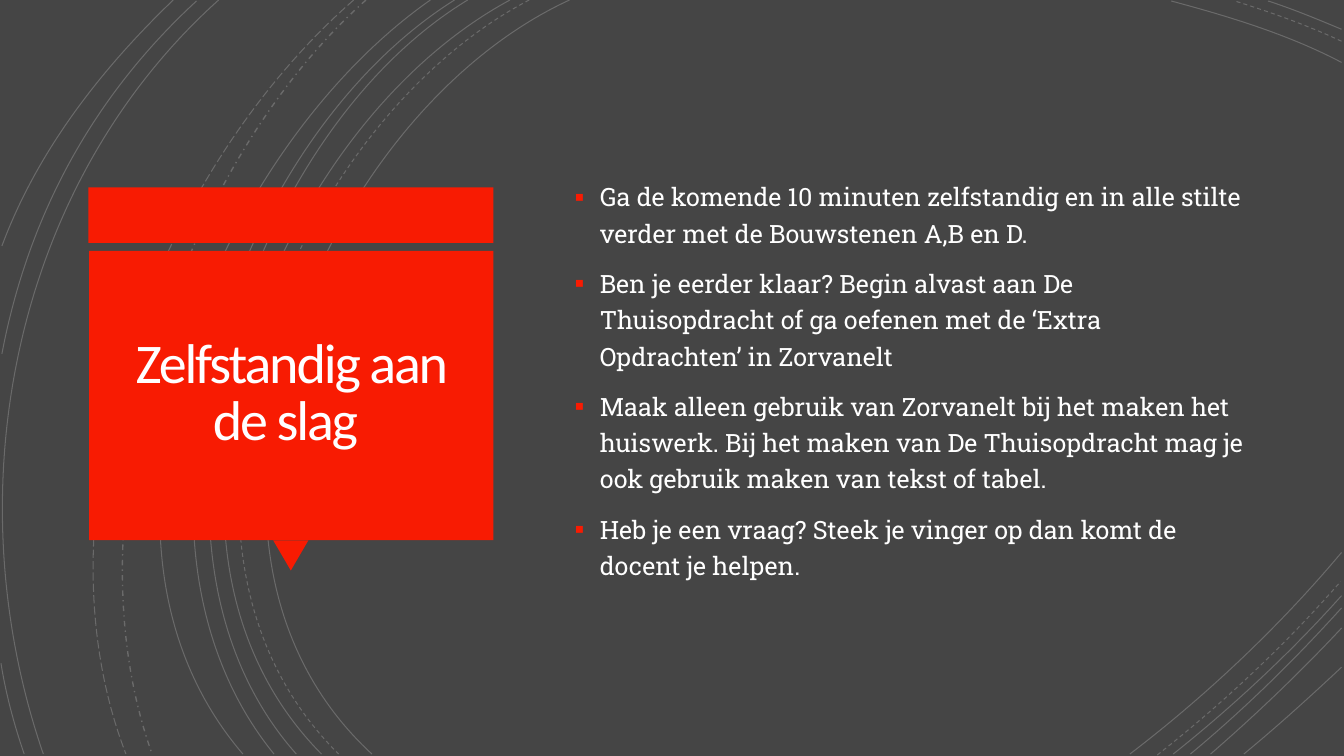
from pptx import Presentation
from pptx.dml.color import RGBColor
from pptx.enum import dml, shapes, text
from pptx.oxml import ns, xmlchemy as xml
from pptx.util import Pt

GREY = RGBColor(0x45, 0x45, 0x45)
RED = RGBColor(0xF8, 0x1B, 0x02)
WHITE = RGBColor(0xFF, 0xFF, 0xFF)
CREAM = RGBColor(0xFF, 0xFE, 0xFF)

DASH = dml.MSO_LINE.DASH
LONG = dml.MSO_LINE.LONG_DASH
DOT = dml.MSO_LINE.DASH_DOT
SOLID = dml.MSO_LINE.SOLID

# Start, two control points and end of each arc, grouped by line style.
ARCS = {
    (SOLID, 0.75): [
        (406.8, 0, 226.8, 82.8, 103, 388.8, 265.7, 538.6),
        (958.3, 44.6, 920.2, 24.5, 877, 11.5, 836.6, 0.7),
        (807.1, 538.6, 861.8, 496.8, 913.7, 447.8, 958.3, 394.6),
        (364.3, 0, 194.4, 91.4, 79.2, 386.6, 229.7, 538.6),
        (958.3, 20.9, 941, 13.7, 923.8, 6.5, 905.8, 0.7),
        (838.1, 538.6, 880.6, 504.7, 921.6, 466.6, 958.3, 425.5),
        (334.1, 0, 175.7, 95.8, 79.2, 389.5, 211.7, 538.6),
        (850.3, 538.6, 888.5, 506.9, 924.5, 471.6, 958.3, 434.2),
        (324.7, 0, 166.3, 99.4, 69.8, 383.8, 195.8, 538.6),
        (864.7, 538.6, 897.1, 510.5, 928.8, 480.2, 958.3, 448.6),
        (307.4, 0, 156.2, 105.8, 38.2, 380.9, 173.5, 538.6),
        (888.5, 538.6, 912.2, 519.1, 935.3, 498.2, 958.3, 476.6),
        (156.2, 0, 7.9, 133.2, -33.1, 352.8, 31, 538.6),
        (140.4, 0.7, 66.2, 69.1, 20.2, 154.1, 1.4, 252.7),
        (0.7, 473.8, 4.3, 496.1, 10.1, 517.7, 17.3, 538.6),
        (123.8, 0, 72, 49.7, 26.6, 108, 1.4, 175.7),
    ],
    (DASH, 0.75): [
        (378, 0, 205.2, 90, 88.6, 386.6, 241.9, 538.6),
        (958.3, 29.5, 933.8, 18, 907.2, 8.6, 882, 0.7),
        (826.6, 539.3, 873.4, 502.6, 918, 460.8, 957.6, 415.4),
    ],
    (DOT, 1): [(261.4, 0, 126.7, 119.5, 46.8, 366.5, 108.7, 538.6)],
    (LONG, 0.75): [(252.7, 0, 113, 121.7, 20.9, 359.3, 90, 538.6)],
}

TASKS = [
    "Ga de komende 10 minuten zelfstandig en in alle stilte verder met de "
    "Bouwstenen A,B en D.",
    "Ben je eerder klaar? Begin alvast aan De Thuisopdracht of ga oefenen "
    "met de ‘Extra Opdrachten’ in Zorvanelt",
    "Maak alleen gebruik van Zorvanelt bij het maken het huiswerk. Bij het "
    "maken van De Thuisopdracht mag je ook gebruik maken van tekst of tabel.",
    "Heb je een vraag? Steek je vinger op dan komt de docent je helpen.",
]


def add_sub(parent, tag, **attrs):
    child = xml.OxmlElement(tag)
    for name, value in attrs.items():
        child.set(name, value)
    parent.append(child)
    return child


def add_arc(slide, coords, dash, width):
    """Draw one faint cubic curve."""
    nums = [Pt(n) for n in coords]
    first, *rest = zip(nums[::2], nums[1::2])
    pen = slide.shapes.build_freeform(*first)
    pen.add_line_segments(rest, close=False)
    arc = pen.convert_to_shape()
    arc.shadow.inherit = False
    arc.fill.background()
    arc.line.color.rgb = WHITE
    arc.line.width = Pt(width)
    arc.line.dash_style = dash
    tint = arc.line._ln.find(".//" + ns.qn("a:srgbClr"))
    add_sub(tint, "a:alpha", val="20000")
    # The three segments become the points of a single curve.
    steps = list(arc._element.iter(ns.qn("a:lnTo")))
    curve = add_sub(steps[0].getparent(), "a:cubicBezTo")
    for step in steps:
        curve.append(step[0])
        step.getparent().remove(step)


def add_block(slide, kind, box, turn=0):
    block = slide.shapes.add_shape(kind, *map(Pt, box))
    block.shadow.inherit = False
    block.fill.solid()
    block.fill.fore_color.rgb = RED
    block.line.fill.background()
    block.rotation = turn


def place(slide, holder, box):
    """Put a placeholder in front at its box and return its text frame."""
    holder.left, holder.top, holder.width, holder.height = map(Pt, box)
    slide.shapes._spTree.append(holder._element)
    frame = holder.text_frame
    frame.word_wrap = True
    frame.auto_size = text.MSO_AUTO_SIZE.NONE
    frame.vertical_anchor = text.MSO_ANCHOR.MIDDLE
    return frame


def set_font(par, name, size, color):
    par.font.name = name
    par.font.size = Pt(size)
    par.font.color.rgb = color


def add_title(slide):
    frame = place(slide, slide.shapes.title, (69.8, 185, 275.8, 193.7))
    frame.margin_left = frame.margin_right = Pt(18)
    frame.margin_top = frame.margin_bottom = Pt(18)
    frame.text = "Zelfstandig aan de slag "
    par = frame.paragraphs[0]
    par.alignment = text.PP_ALIGN.CENTER
    par.line_spacing = 0.85
    set_font(par, "Calibri", 40, CREAM)
    par._p.pPr.find(ns.qn("a:defRPr")).set("spc", "-150")


def set_bullet(par):
    props = par._p.get_or_add_pPr()
    props.set("marL", str(Pt(18)))
    props.set("indent", str(-Pt(18)))
    add_sub(add_sub(props, "a:buClr"), "a:srgbClr", val=str(RED))
    add_sub(props, "a:buSzPct", val="110000")
    add_sub(props, "a:buChar", char="▪")


def add_tasks(slide):
    frame = place(slide, slide.placeholders[1], (403.2, 63.4, 494.6, 413.3))
    frame.text = "\n".join(TASKS)
    for par in frame.paragraphs:
        par.line_spacing = 1.2
        par.space_before = Pt(10)
        set_bullet(par)
        set_font(par, "Roboto Slab", 18, WHITE)


def main():
    deck = Presentation()
    deck.slide_width, deck.slide_height = Pt(960), Pt(540)
    slide = deck.slides.add_slide(deck.slide_layouts[1])
    slide.background.fill.solid()
    slide.background.fill.fore_color.rgb = GREY
    for (dash, width), arcs in ARCS.items():
        for coords in arcs:
            add_arc(slide, coords, dash, width)
    kind = shapes.MSO_SHAPE
    add_block(slide, kind.RECTANGLE, (63.2, 133.9, 289.2, 39.6))
    add_block(slide, kind.ISOSCELES_TRIANGLE, (195.1, 385.9, 25.2, 21.6), 180)
    add_block(slide, kind.RECTANGLE, (63.6, 179.3, 288.8, 206.6))
    add_title(slide)
    add_tasks(slide)
    deck.save("out.pptx")


if __name__ == "__main__":
    main()
